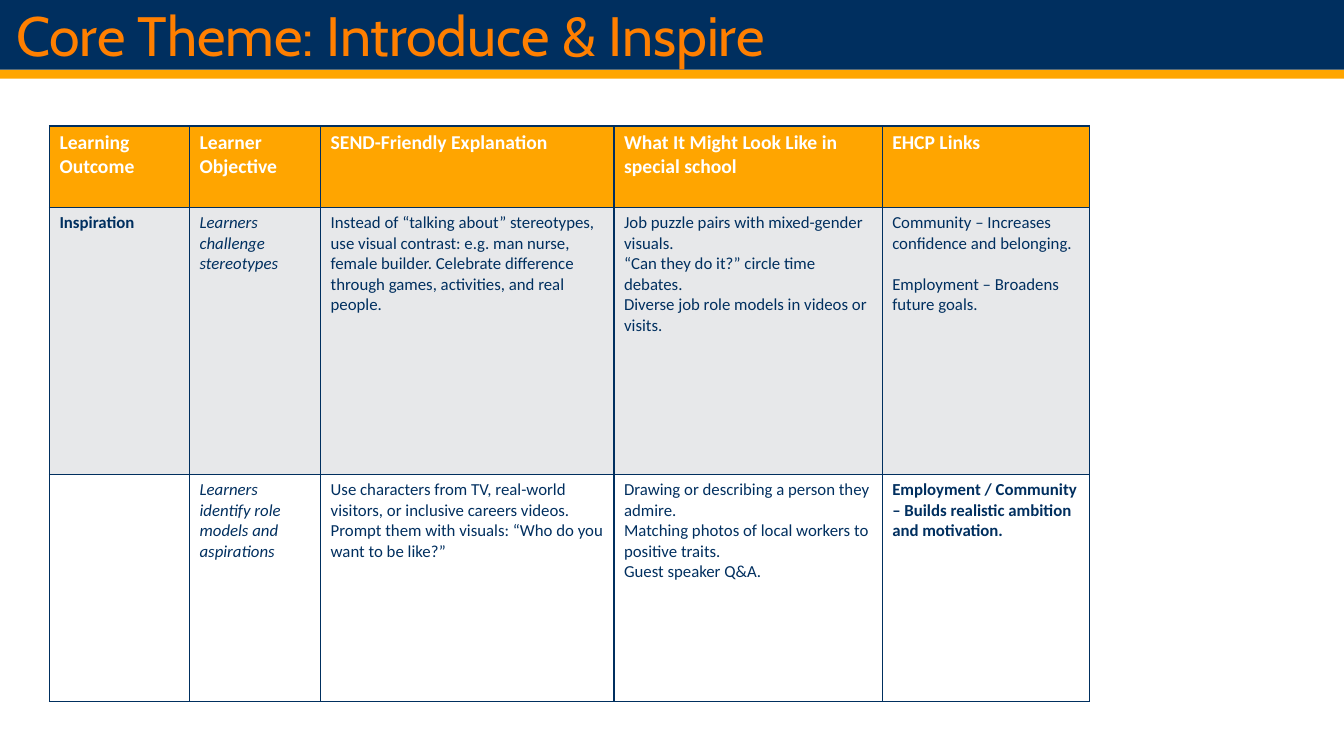
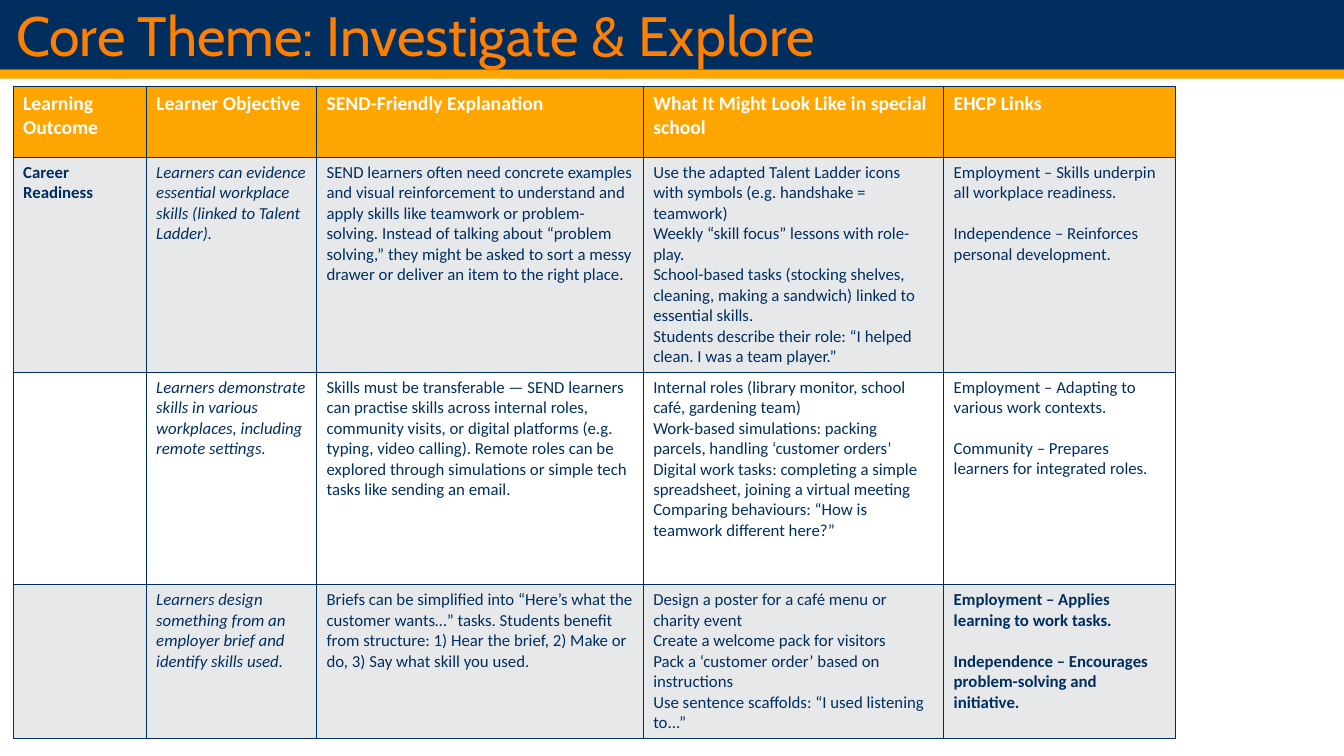
import pptx
import pptx.util
import pptx.dml.color
import pptx.enum.shapes
import pptx.enum.text
import pptx.oxml

Inches = pptx.util.Inches
Pt = pptx.util.Pt

COLORS = {
    "navy": "002F5F",
    "amber": "FFA500",
    "orange": "FF7F00",
    "gray": "E7E8EA",
    "white": "FFFFFF",
}
SLIDE_SIZE = (13.33, 7.5)
BANDS = [
    {"box": (0, 0.69, 13.33, 0.09), "color": "amber"},
    {"box": (0, 0, 13.33, 0.69), "color": "navy"},
]
TITLE_BOX = (0.06, 0.13, 11.53, 0.5)
TITLE_FONT = {"name": "Cabin", "size": Pt(39.6), "color": "orange"}
HEADER_FONT = {"name": "Calibri", "size": Pt(14), "bold": True, "color": "white"}
BODY_FONT = {"name": "Calibri", "size": Pt(12), "color": "navy"}
COLUMN_FONTS = [{"bold": True}, {"italic": True}, {}, {}, {}]
LINK_GAP = Pt(14.6)
HEADINGS = [
    "Learning Outcome",
    "Learner Objective",
    "SEND-Friendly Explanation",
    "What It Might Look Like in special school",
    "EHCP Links",
]

THEMES = [
    {
        "title": "Core Theme: Introduce & Inspire",
        "corner": (0.49, 1.25),
        "widths": [1.39, 1.3, 2.91, 2.66, 2.06],
        "heights": [0.81, 2.65, 2.25],
        "rows": [
            [
                ["Inspiration"],
                ["Learners challenge stereotypes"],
                ["Instead of “talking about” stereotypes, use visual contrast: e.g. man nurse, "
                 "female builder. Celebrate difference through games, activities, and real people."],
                ["Job puzzle pairs with mixed-gender visuals.",
                 "“Can they do it?” circle time debates.",
                 "Diverse job role models in videos or visits."],
                ["Community – Increases confidence and belonging.",
                 "Employment – Broadens future goals."],
            ],
            [
                [],
                ["Learners identify role models and aspirations"],
                ["Use characters from TV, real-world visitors, or inclusive careers videos. "
                 "Prompt them with visuals: “Who do you want to be like?”"],
                ["Drawing or describing a person they admire.",
                 "Matching photos of local workers to positive traits.",
                 "Guest speaker Q&A."],
                ["Employment / Community – Builds realistic ambition and motivation."],
            ],
        ],
    },
    {
        "title": "Core Theme: Investigate & Explore",
        "corner": (0.13, 0.86),
        "widths": [1.32, 1.69, 3.24, 2.98, 2.3],
        "heights": [0.7, 2.13, 2.11, 1.5],
        "rows": [
            [
                ["Career Readiness"],
                ["Learners can evidence essential workplace skills (linked to Talent Ladder)."],
                ["SEND learners often need concrete examples and visual reinforcement to understand "
                 "and apply skills like teamwork or problem-solving. Instead of talking about "
                 "“problem solving,” they might be asked to sort a messy drawer or deliver an item "
                 "to the right place."],
                ["Use the adapted Talent Ladder icons with symbols (e.g. handshake = teamwork)",
                 "Weekly “skill focus” lessons with role-play.",
                 "School-based tasks (stocking shelves, cleaning, making a sandwich) linked to "
                 "essential skills.",
                 "Students describe their role: “I helped clean. I was a team player.”"],
                ["Employment – Skills underpin all workplace readiness.",
                 "Independence – Reinforces personal development."],
            ],
            [
                [],
                ["Learners demonstrate skills in various workplaces, including remote settings."],
                ["Skills must be transferable — SEND learners can practise skills across internal "
                 "roles, community visits, or digital platforms (e.g. typing, video calling). Remote "
                 "roles can be explored through simulations or simple tech tasks like sending an "
                 "email."],
                ["Internal roles (library monitor, school café, gardening team)",
                 "Work-based simulations: packing parcels, handling ‘customer orders’",
                 "Digital work tasks: completing a simple spreadsheet, joining a virtual meeting",
                 "Comparing behaviours: “How is teamwork different here?”"],
                ["Employment – Adapting to various work contexts.",
                 "Community – Prepares learners for integrated roles."],
            ],
            [
                [],
                ["Learners design something from an employer brief and identify skills used."],
                ["Briefs can be simplified into “Here’s what the customer wants…” tasks. Students "
                 "benefit from structure: 1) Hear the brief, 2) Make or do, 3) Say what skill you "
                 "used."],
                ["Design a poster for a café menu or charity event",
                 "Create a welcome pack for visitors",
                 "Pack a ‘customer order’ based on instructions",
                 "Use sentence scaffolds: “I used listening to...”"],
                ["Employment – Applies learning to work tasks.",
                 "Independence – Encourages problem-solving and initiative."],
            ],
        ],
    },
]


def rgb(color):
    return pptx.dml.color.RGBColor.from_string(COLORS[color])


def format_font(font, values):
    for key, value in values.items():
        if key == "color":
            font.color.rgb = rgb(value)
        else:
            setattr(font, key, value)


def add_bands(slide):
    layout_tree = slide.slide_layout.shapes.element
    for position, part in enumerate(BANDS, start=2):
        band = slide.shapes.add_shape(
            pptx.enum.shapes.MSO_SHAPE.RECTANGLE, *map(Inches, part["box"]))
        band.shadow.inherit = False
        band.fill.solid()
        band.fill.fore_color.rgb = rgb(part["color"])
        band.line.fill.background()
        layout_tree.insert(position, band.element)


def set_title(slide, box, text):
    title = slide.shapes.title
    for side, length in zip(("left", "top", "width", "height"), box):
        setattr(title, side, Inches(length))
    frame = title.text_frame
    frame.text = text
    frame.word_wrap = True
    frame.auto_size = pptx.enum.text.MSO_AUTO_SIZE.NONE
    frame.vertical_anchor = pptx.enum.text.MSO_ANCHOR.MIDDLE
    heading = frame.paragraphs[0]
    heading.alignment = pptx.enum.text.PP_ALIGN.LEFT
    heading.line_spacing = 0.9
    format_font(heading.runs[0].font, TITLE_FONT)


def add_borders(cell):
    properties = cell._tc.get_or_add_tcPr()
    for position, side in enumerate("LRTB"):
        properties.insert(position, pptx.oxml.parse_xml(
            f'<a:ln{side} xmlns:a="http://schemas.openxmlformats.org/drawingml/2006/main" '
            f'w="{Pt(1)}"><a:solidFill><a:srgbClr val="{COLORS["navy"]}"/></a:solidFill>'
            f'</a:ln{side}>'))


def fill_cell(cell, lines, color, font, gap):
    cell.fill.solid()
    cell.fill.fore_color.rgb = rgb(color)
    add_borders(cell)
    cell.text = "\n".join(lines)
    for number, paragraph in enumerate(cell.text_frame.paragraphs):
        if number:
            paragraph.space_before = gap
        format_font(paragraph.font, font)
        for run in paragraph.runs:
            format_font(run.font, font)


def add_outcomes(slide, corner, widths, heights, rows):
    box = (*corner, sum(widths), sum(heights))
    outcomes = slide.shapes.add_table(
        len(heights), len(widths), *map(Inches, box)).table
    outcomes.first_row = outcomes.horz_banding = False
    for column, width in zip(outcomes.columns, widths):
        column.width = Inches(width)
    for row, height in zip(outcomes.rows, heights):
        row.height = Inches(height)
    for column, heading in enumerate(HEADINGS):
        fill_cell(outcomes.cell(0, column), [heading], "amber", HEADER_FONT, Pt(0))
    links = len(HEADINGS) - 1
    for number, entries in enumerate(rows, start=1):
        color = "gray" if number % 2 else "white"
        for column, lines in enumerate(entries):
            font = {**BODY_FONT, **COLUMN_FONTS[column]}
            if column == links and number == len(rows):
                font["bold"] = True
            gap = LINK_GAP if column == links else Pt(0)
            fill_cell(outcomes.cell(number, column), lines, color, font, gap)


def build_theme(deck, theme):
    slide = deck.slides.add_slide(deck.slide_layouts[5])
    set_title(slide, TITLE_BOX, theme["title"])
    add_outcomes(slide, theme["corner"], theme["widths"], theme["heights"], theme["rows"])
    return slide


def main():
    deck = pptx.Presentation()
    deck.slide_width, deck.slide_height = map(Inches, SLIDE_SIZE)
    slides = [build_theme(deck, theme) for theme in THEMES]
    add_bands(slides[0])
    deck.save("out.pptx")


if __name__ == "__main__":
    main()
